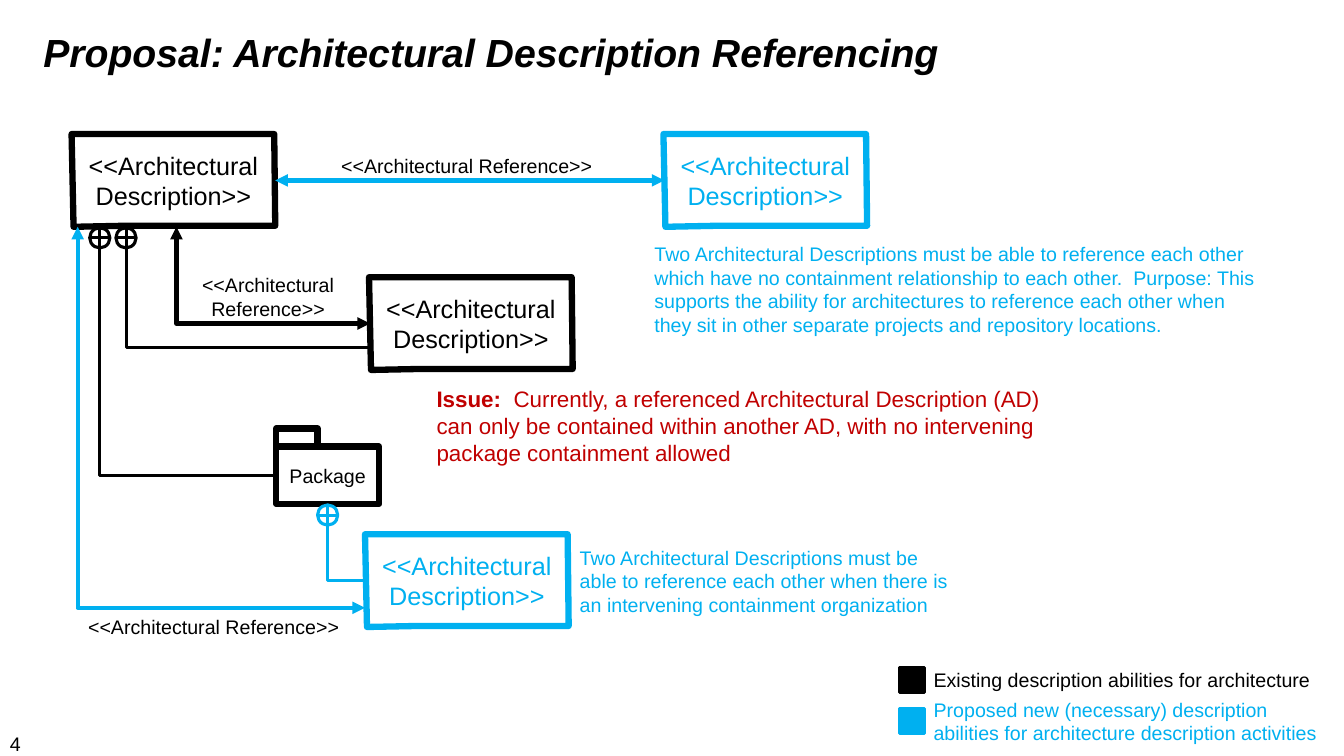
"""Build the slide on architectural description referencing."""
import pptx
import pptx.util
import pptx.dml.color
import pptx.enum.shapes
import pptx.enum.text
import pptx.oxml
import pptx.oxml.ns
from dataclasses import dataclass

Inches = pptx.util.Inches
Shapes = pptx.enum.shapes.MSO_SHAPE
Connectors = pptx.enum.shapes.MSO_CONNECTOR
Align = pptx.enum.text.PP_ALIGN
Anchor = pptx.enum.text.MSO_ANCHOR


@dataclass(frozen=True)
class Theme:
    font: str = "Arial"
    existing: str = "000000"
    proposed: str = "00B0F0"
    issue: str = "C00000"
    paper: str = "FFFFFF"
    title: int = 28
    box: int = 18
    emphasis: int = 16
    body: int = 14
    border: float = 4.5
    arrow: float = 3
    thin: float = 2.25
    swatch: float = 2


THEME = Theme()
SLIDE_WIDTH, SLIDE_HEIGHT = 13.33, 7.5
TITLE = "Proposal: Architectural Description Referencing"
DESCRIPTION = "<<Architectural Description>>"
REFERENCE = "<<Architectural Reference>>"
BOX_WIDTH, BOX_HEIGHT = 2.02, 0.92
BOX_OUTLINE = [(0, 0), (1, 46), (2, 92), (53, 91), (103, 91), (202, 91), (201, 0)]
BOXES = {
    "parent": (0.71, 1.33, THEME.existing),
    "child": (3.66, 2.75, THEME.existing),
    "separate": (6.58, 1.33, THEME.proposed),
    "packaged": (3.62, 5.3, THEME.proposed),
}
PACKAGE = (2.74, 4.43, 1.02, 0.57)
PACKAGE_TAB = (0.41, 0.18)
SYMBOL = 0.2
LABELS = [(1.78, 2.71, 1.76, 0.47), (3.32, 1.52, 2.62, 0.24), (0.81, 6.1, 2.62, 0.24)]
NOTES = [
    ((6.49, 2.4, 6.02, 0.94),
     "Two Architectural Descriptions must be able to reference each other which have "
     "no containment relationship to each other.  Purpose: This supports the ability "
     "for architectures to reference each other when they sit in other separate "
     "projects and repository locations."),
    ((5.75, 5.41, 3.69, 0.71),
     "Two Architectural Descriptions must be able to reference each other when there "
     "is an intervening containment organization"),
]
ISSUE = ("Issue:  ",
         "Currently, a referenced Architectural Description (AD) can only be contained "
         "within another AD, with no intervening package containment allowed")
LEGEND = [
    (6.62, 6.62, 0.24, THEME.existing, "Existing description abilities for architecture"),
    (7.03, 6.92, 0.47, THEME.proposed,
     "Proposed new (necessary) description abilities for architecture description activities"),
]


def rgb(color):
    return pptx.dml.color.RGBColor.from_string(color)


def style_font(para, size, color):
    para.font.name = THEME.font
    para.font.size = pptx.util.Pt(size)
    para.font.color.rgb = rgb(color)


def write(shape, text, size, color, align=Align.LEFT, inset=0.0):
    frame = shape.text_frame
    frame.word_wrap = True
    frame.vertical_anchor = Anchor.MIDDLE
    frame.margin_left = frame.margin_right = Inches(inset)
    frame.margin_top = frame.margin_bottom = Inches(inset / 2)
    para = frame.paragraphs[0]
    para.alignment = align
    for part in [text] if isinstance(text, str) else text:
        para.add_run().text = part
    style_font(para, size, color)
    return para


def add_text(page, area, text, size, color, align=Align.LEFT, inset=0.0):
    box = page.shapes.add_textbox(*map(Inches, area))
    return write(box, text, size, color, align, inset)


def paint(shape, line, width, fill=None):
    shape.shadow.inherit = False
    if fill:
        shape.fill.solid()
        shape.fill.fore_color.rgb = rgb(fill)
    else:
        shape.fill.background()
    shape.line.color.rgb = rgb(line)
    shape.line.width = pptx.util.Pt(width)


def add_shape(page, kind, area, line, width, fill=None):
    shape = page.shapes.add_shape(kind, *map(Inches, area))
    paint(shape, line, width, fill)
    return shape


def add_description(page, left, top, color):
    points = [(round(left * 100) + x, round(top * 100) + y) for x, y in BOX_OUTLINE]
    builder = page.shapes.build_freeform(*points[0], scale=Inches(0.01))
    builder.add_line_segments(points[1:], close=True)
    box = builder.convert_to_shape()
    paint(box, color, THEME.border, THEME.paper)
    write(box, DESCRIPTION, THEME.box, color, Align.CENTER, 0.1)


def add_line(page, start, end, color, width, arrows=False, kind=Connectors.STRAIGHT):
    line = page.shapes.add_connector(kind, *map(Inches, start + end))
    line.line.color.rgb = rgb(color)
    line.line.width = pptx.util.Pt(width)
    if arrows:
        for tag in ("a:headEnd", "a:tailEnd"):
            tip = pptx.oxml.parse_xml(f'<{tag} {pptx.oxml.ns.nsdecls("a")} type="triangle"/>')
            line.line._get_or_add_ln().append(tip)
    effects = pptx.oxml.parse_xml(f'<a:effectLst {pptx.oxml.ns.nsdecls("a")}/>')
    line._element.spPr.append(effects)
    return line


def add_elbow(page, start, end, color, width, arrows=False):
    """Run down from start, then right to end."""
    across, down = end[0] - start[0], end[1] - start[1]
    left = (start[0] + end[0] - down) / 2
    top = (start[1] + end[1] - across) / 2
    elbow = add_line(page, (left, top), (left + down, top + across), color, width,
                     arrows, Connectors.ELBOW)
    properties = elbow._element.spPr
    properties.find(pptx.oxml.ns.qn("a:prstGeom")).set("prst", "bentConnector2")
    frame = properties.find(pptx.oxml.ns.qn("a:xfrm"))
    frame.set("rot", "16200000")
    frame.set("flipH", "1")


def add_containment(page, start, end, color):
    add_elbow(page, start, end, color, THEME.thin)
    left, middle = start[0] - SYMBOL / 2, start[1] + SYMBOL / 2 + 0.01
    add_shape(page, Shapes.OVAL, (left, middle - SYMBOL / 2, SYMBOL, SYMBOL), color, THEME.thin)
    add_line(page, (left, middle), (left + SYMBOL, middle), color, THEME.thin)


def add_diagram(page):
    for left, top, color in BOXES.values():
        add_description(page, left, top, color)
    left, top, width, height = PACKAGE
    package = add_shape(page, Shapes.RECTANGLE, PACKAGE, THEME.existing, THEME.border, THEME.paper)
    write(package, "Package", THEME.body, THEME.existing, Align.CENTER, 0.1)
    add_shape(page, Shapes.RECTANGLE, (left, top - PACKAGE_TAB[1], *PACKAGE_TAB),
              THEME.existing, THEME.border, THEME.paper)

    parent, child, separate, packaged = (BOXES[name][:2] for name in BOXES)
    base, middle = parent[1] + BOX_HEIGHT, parent[1] + BOX_HEIGHT / 2
    add_containment(page, (1.25, base), (child[0], 3.45), THEME.existing)
    add_containment(page, (0.99, base), (left, top + height / 2), THEME.existing)
    add_containment(page, (left + width / 2, top + height),
                    (packaged[0], packaged[1] + BOX_HEIGHT / 2), THEME.proposed)
    add_line(page, (parent[0] + BOX_WIDTH, middle), (separate[0] + 0.01, middle),
             THEME.proposed, THEME.arrow, True)
    add_elbow(page, (0.77, base), (packaged[0], 6.03), THEME.proposed, THEME.arrow, True)
    add_elbow(page, (1.75, base), (child[0] + 0.01, child[1] + BOX_HEIGHT / 2),
              THEME.existing, THEME.arrow, True)


def main():
    deck = pptx.Presentation()
    deck.slide_width, deck.slide_height = Inches(SLIDE_WIDTH), Inches(SLIDE_HEIGHT)
    page = deck.slides.add_slide(deck.slide_layouts[5])
    title = page.shapes.title
    title.left, title.top, title.width, title.height = map(Inches, (0.33, 0.19, 11.53, 0.64))
    heading = write(title, TITLE, THEME.title, THEME.existing, inset=0.1)
    heading.font.bold = heading.font.italic = True
    add_diagram(page)
    for area in LABELS:
        add_text(page, area, REFERENCE, THEME.body, THEME.existing, Align.CENTER)
    for area, note in NOTES:
        add_text(page, area, note, THEME.body, THEME.proposed)
    issue = add_text(page, (4.33, 3.82, 6.02, 0.81), ISSUE, THEME.emphasis, THEME.issue)
    issue.runs[0].font.bold = True
    for swatch_top, text_top, height, color, meaning in LEGEND:
        add_shape(page, Shapes.RECTANGLE, (8.92, swatch_top, 0.25, 0.25), color, THEME.swatch, color)
        add_text(page, (9.26, text_top, 3.9, height), meaning, THEME.body, color)
    add_text(page, (0, 7.21, 1.01, 0.34), "4", THEME.body, THEME.existing, inset=0.1)
    deck.save("out.pptx")


if __name__ == "__main__":
    main()
